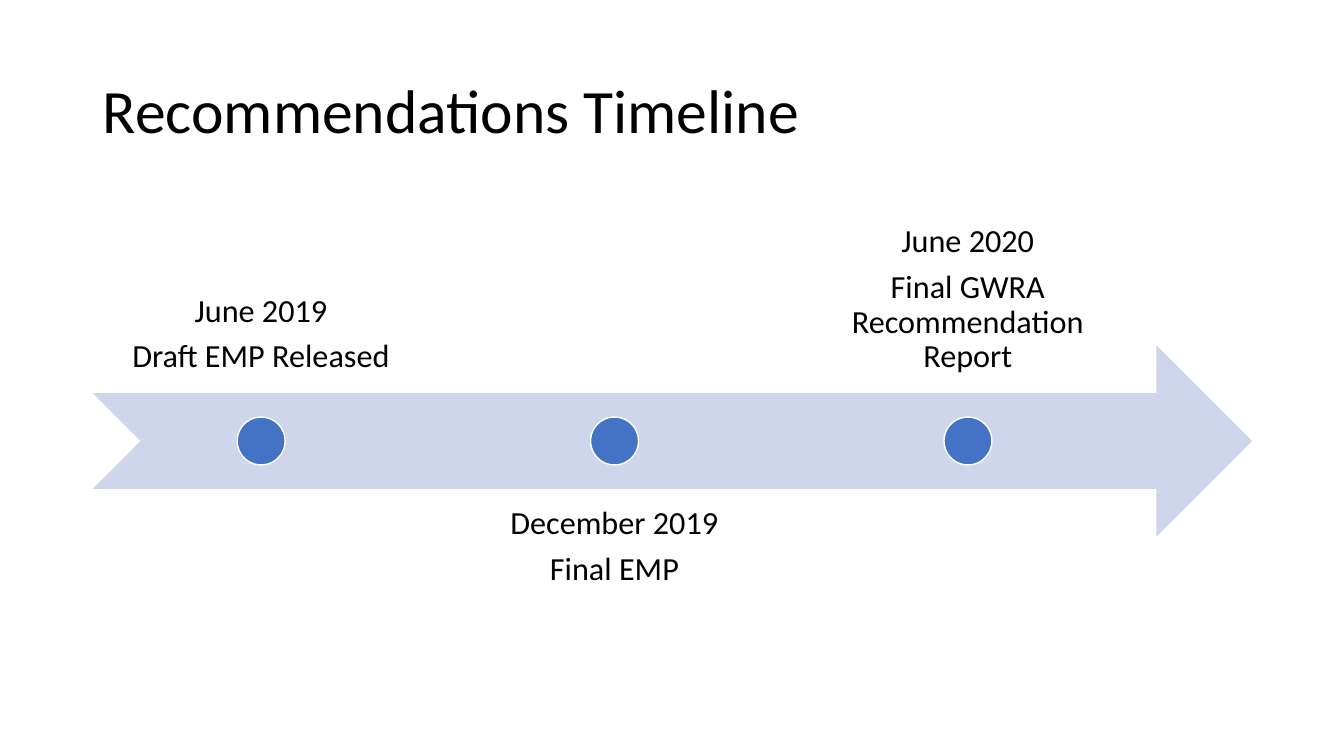
from pptx import Presentation
from pptx import util as u
from pptx.dml.color import RGBColor
from pptx.enum import shapes, text

COLORS = {"text": "000000", "arrow": "CFD5EA", "dot": "4472C4", "outline": "FFFFFF"}

deck = Presentation()
deck.slide_width, deck.slide_height = u.Inches(13.33), u.Inches(7.5)
page = deck.slides.add_slide(deck.slide_layouts[5])


def write(box, lines, size, align, anchor, gap=0, inset=0.1):
    """Fill a box with one paragraph per line, spaced by gap points."""
    frame = box.text_frame
    frame.word_wrap = True
    frame.auto_size = text.MSO_AUTO_SIZE.NONE
    frame.vertical_anchor = anchor
    frame.margin_left = frame.margin_right = u.Inches(inset)
    frame.margin_top = frame.margin_bottom = u.Inches(min(inset, 0.18))
    for index, line in enumerate(lines):
        para = frame.paragraphs[0] if index == 0 else frame.add_paragraph()
        para.alignment = align
        para.line_spacing = 0.9
        para.space_before = u.Pt(gap if index else 0)
        span = para.add_run()
        span.text = line
        span.font.name = "Calibri"
        span.font.size = u.Pt(size)
        span.font.color.rgb = RGBColor.from_string(COLORS["text"])


def add_filled(kind, left, top, width, height, color):
    """Add a flat preset shape, measured in inches."""
    shape = page.shapes.add_shape(kind, *map(u.Inches, (left, top, width, height)))
    shape.shadow.inherit = False
    shape.fill.solid()
    shape.fill.fore_color.rgb = RGBColor.from_string(COLORS[color])
    shape.line.fill.background()
    return shape


# Grid: content margin, band height and milestone columns
LEFT, WIDTH = 0.92, 11.5
TOP, BAND = 2, 1.9
ARROW_TOP = TOP + 0.75 * BAND
COLUMN, PITCH = 3.34, 3.505
DOT = BAND / 4

# Title
title = page.shapes.title
title.left, title.top = u.Inches(LEFT), u.Inches(0.4)
title.width, title.height = u.Inches(WIDTH), u.Inches(1.45)
write(title, ["Recommendations Timeline"], 44, text.PP_ALIGN.LEFT, text.MSO_ANCHOR.MIDDLE)

# Timeline arrow
add_filled(shapes.MSO_SHAPE.NOTCHED_RIGHT_ARROW, LEFT, ARROW_TOP, WIDTH, BAND, "arrow")

# Milestones, alternately above and below the arrow
milestones = [
    ("June 2019", "Draft EMP Released"),
    ("December 2019", "Final EMP"),
    ("June 2020", "Final GWRA Recommendation Report"),
]
for index, lines in enumerate(milestones):
    left = LEFT + index * PITCH
    below = index % 2 == 1
    top = TOP + 1.5 * BAND if below else TOP
    anchor = text.MSO_ANCHOR.TOP if below else text.MSO_ANCHOR.BOTTOM
    label = page.shapes.add_textbox(*map(u.Inches, (left, top, COLUMN, BAND)))
    write(label, lines, 23, text.PP_ALIGN.CENTER, anchor, gap=8, inset=0.18)

    dot = add_filled(shapes.MSO_SHAPE.OVAL, left + (COLUMN - DOT) / 2,
                     ARROW_TOP + (BAND - DOT) / 2, DOT, DOT, "dot")
    dot.line.color.rgb = RGBColor.from_string(COLORS["outline"])
    dot.line.width = u.Pt(1)

deck.save("out.pptx")
